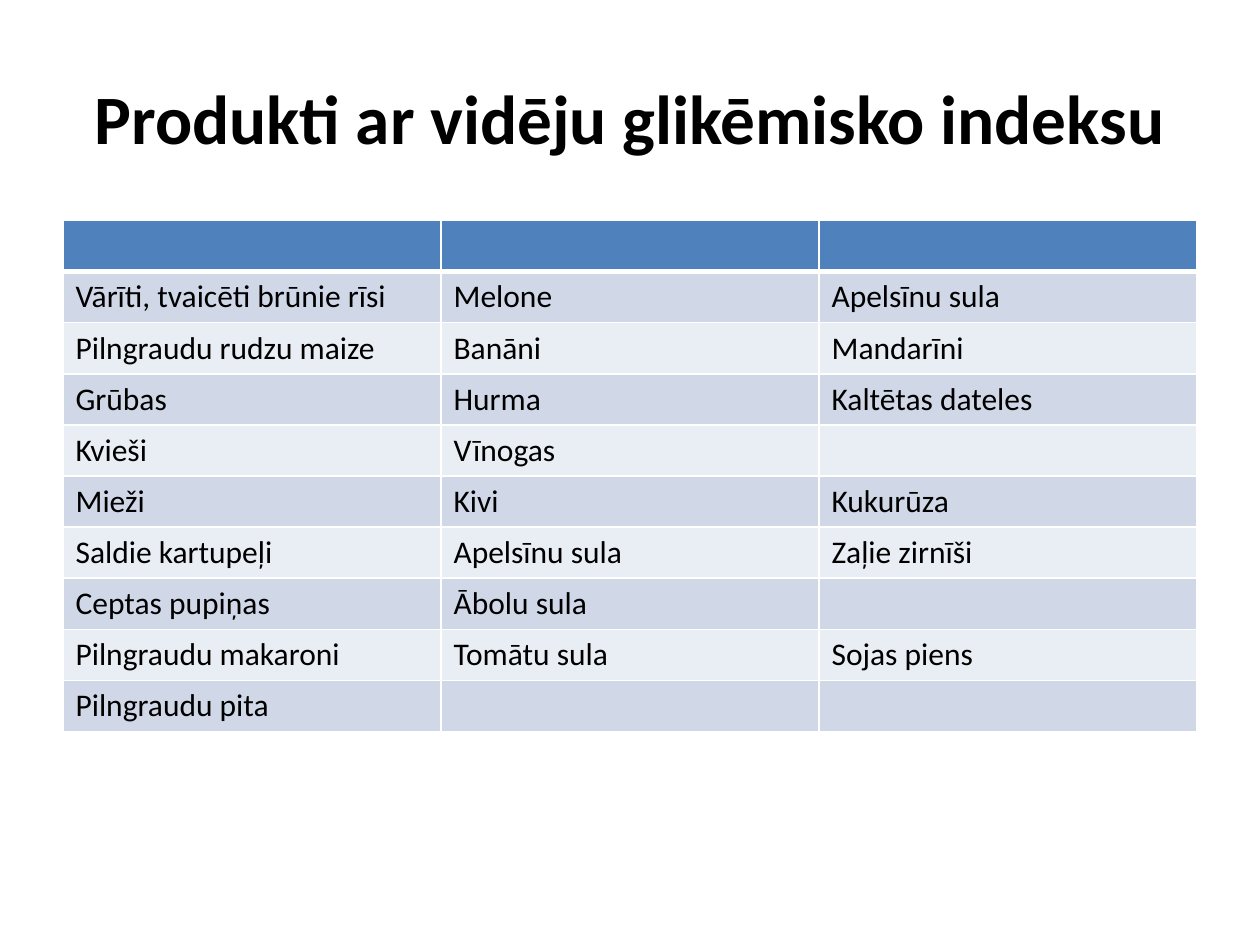
from dataclasses import dataclass

from lxml.etree import SubElement as Sub
from pptx import Presentation
from pptx.dml.color import RGBColor as RGB
from pptx.enum.text import MSO_ANCHOR as Anchor, PP_ALIGN as Align
from pptx.oxml.ns import qn
from pptx.util import Pt


@dataclass(frozen=True)
class Theme:
    font: str = "Calibri"
    ink: str = "000000"
    head: str = "4F81BD"
    bands: tuple = ("D0D8E8", "E9EDF4")
    rule: str = "FFFFFF"
    title: float = 39.6
    body: float = 18


THEME = Theme()
TITLE = "Produkti ar vidēju glikēmisko indeksu"
FOODS = [
    ("Vārīti, tvaicēti brūnie rīsi", "Melone", "Apelsīnu sula"),
    ("Pilngraudu rudzu maize", "Banāni", "Mandarīni"),
    ("Grūbas", "Hurma", "Kaltētas dateles"),
    ("Kvieši", "Vīnogas", ""),
    ("Mieži", "Kivi", "Kukurūza"),
    ("Saldie kartupeļi", "Apelsīnu sula", "Zaļie zirnīši"),
    ("Ceptas pupiņas", "Ābolu sula", ""),
    ("Pilngraudu makaroni", "Tomātu sula", "Sojas piens"),
    ("Pilngraudu pita", "", ""),
]


def write(frame, text, size=THEME.body, bold=False, align=Align.LEFT):
    para = frame.paragraphs[0]
    para.alignment = align
    run = para.add_run()
    run.text = text
    font = run.font
    font.name, font.size, font.bold = THEME.font, Pt(size), bold
    font.color.rgb = RGB.from_string(THEME.ink)


def edge(cell, **widths):
    """Draw the cell's borders; call before the fill is set."""
    props = cell._tc.get_or_add_tcPr()
    for side, width in widths.items():
        line = Sub(props, qn(f"a:ln{side}"), w=str(Pt(width)))
        fill = Sub(line, qn("a:solidFill"))
        Sub(fill, qn("a:srgbClr"), val=THEME.rule)


def add_title(slide, box, text):
    title = slide.shapes.title
    title.left, title.top, title.width, title.height = map(Pt, box)
    frame = title.text_frame
    frame.word_wrap = True
    frame.vertical_anchor = Anchor.MIDDLE
    write(frame, text, size=THEME.title, bold=True, align=Align.CENTER)


def add_grid(slide, box, foods):
    # The first row is an empty heading band
    rows = [("",) * len(foods[0])] + foods
    table = slide.shapes.add_table(len(rows), len(rows[0]), *map(Pt, box)).table
    for col in table.columns:
        col.width = Pt(box[2] / len(rows[0]))
    for r, row in enumerate(rows):
        table.rows[r].height = Pt(box[3] / len(rows))
        shade = THEME.bands[(r - 1) % 2] if r else THEME.head
        for c, text in enumerate(row):
            cell = table.cell(r, c)
            edge(cell, L=1, R=1, T=3 if r == 1 else 1, B=1 if r else 3)
            cell.fill.solid()
            cell.fill.fore_color.rgb = RGB.from_string(shade)
            cell.vertical_anchor = Anchor.MIDDLE
            if text:
                write(cell.text_frame, text)


def main():
    deck = Presentation()
    deck.slide_width, deck.slide_height = Pt(720), Pt(540)
    slide = deck.slides.add_slide(deck.slide_layouts[5])
    add_title(slide, (36, 21.6, 648, 90), TITLE)
    add_grid(slide, (36, 126, 648, 292), FOODS)
    deck.save("out.pptx")


if __name__ == "__main__":
    main()
